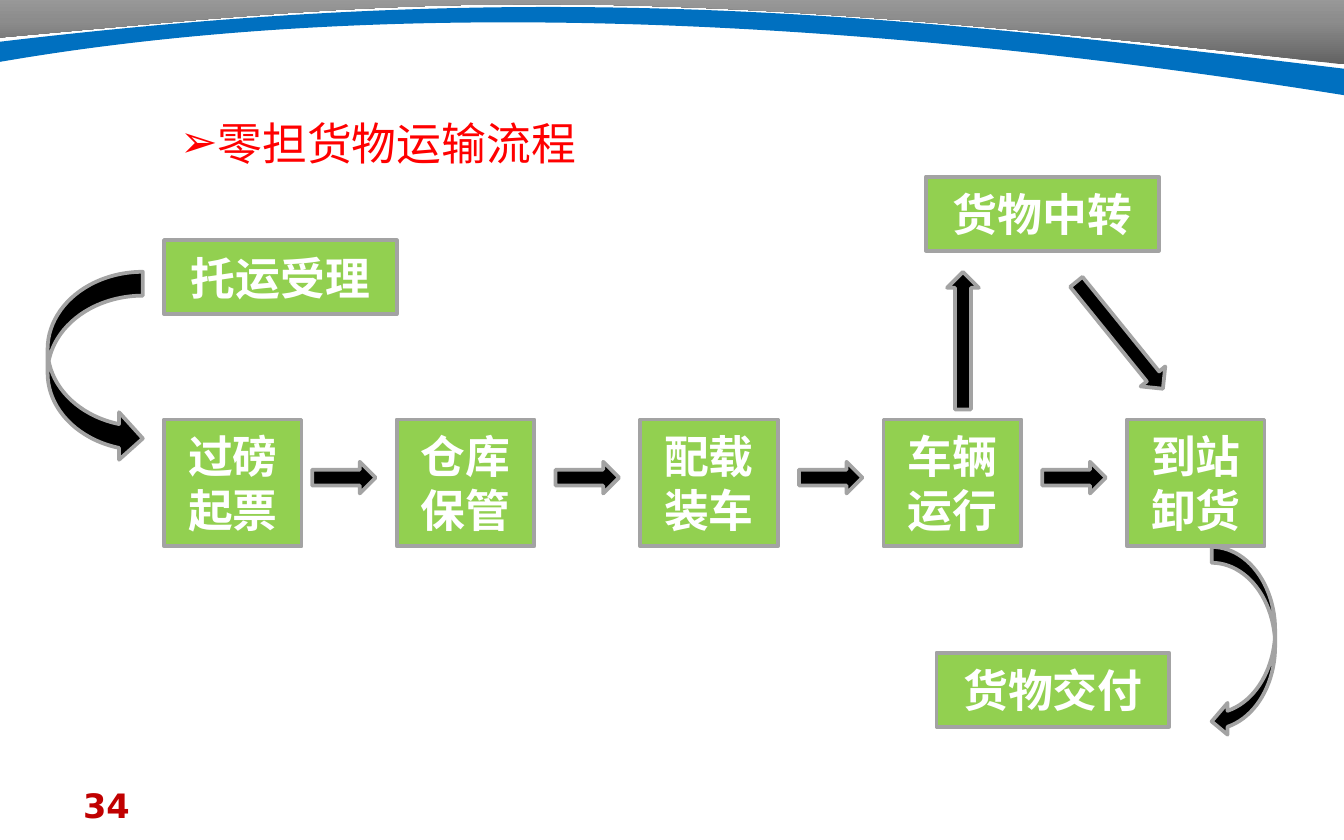
from copy import deepcopy

from lxml import etree
from pptx import Presentation
from pptx.dml.color import RGBColor
from pptx.enum import shapes, text
from pptx.oxml import ns
from pptx.util import Cm, Pt

COLORS = {
    "step": "92D050", "outline": "A3A3A3", "arrow": "000000", "white": "FFFFFF",
    "title": "FF0000", "number": "C00000", "band": "0070C0",
    "dark": "626262", "middle": "8C8C8C", "light": "A6A6A6",
}
CJK_FONT = "Noto Sans CJK SC"
RGB = {name: RGBColor.from_string(value) for name, value in COLORS.items()}


def style_font(para, name, size, color, bold):
    """Format a whole paragraph, East Asian characters included."""
    font = para.font
    font.name, font.size, font.bold = name, Pt(size), bold
    font.color.rgb = RGB[color]
    defaults = para._p.pPr.find(ns.qn("a:defRPr"))
    etree.SubElement(defaults, ns.qn("a:ea")).set("typeface", name)


def add_block(kind, left, top, width, height, color):
    block = page.shapes.add_shape(kind, Cm(left), Cm(top), Cm(width), Cm(height))
    block.shadow.inherit = False
    block.fill.solid()
    block.fill.fore_color.rgb = RGB[color]
    block.line.color.rgb = RGB["outline"]
    block.line.width = Pt(2)
    return block


deck = Presentation()
deck.slide_width, deck.slide_height = Cm(25.4), Cm(15.88)
page = deck.slides.add_slide(deck.slide_layouts[5])

# Header swooshes: outline points, and the index where each cubic curve begins
swooshes = {
    "gray": ([(25.4, 1.22), (11.25, -0.43), (7.82, 0), (0, 0.71),
              (0, 0.48), (0, -0.05), (25.4, -0.05)], (0,)),
    "blue": ([(0, 0.79), (10.24, -0.43), (16.56, 0.23), (25.4, 1.3),
              (25.4, 1.8), (15.37, 0.2), (6.78, 0), (0, 1.17)], (0, 4)),
}
headers = {}
for name, (points, curve_starts) in swooshes.items():
    points = [(Cm(x), Cm(y)) for x, y in points]
    builder = page.shapes.build_freeform(*points[0])
    builder.add_line_segments(points[1:], close=True)
    header = headers[name] = builder.convert_to_shape()
    header.shadow.inherit = False
    header.line.fill.background()
    segments = list(header._element.iter(ns.qn("a:lnTo")))
    for start in curve_starts:
        controls = segments[start:start + 3]
        curve = etree.Element(ns.qn("a:cubicBezTo"))
        controls[0].addprevious(curve)
        for control in controls:
            curve.append(control[0])
            control.getparent().remove(control)

headers["blue"].fill.solid()
headers["blue"].fill.fore_color.rgb = RGB["band"]

gray_fill = headers["gray"].fill
gray_fill.gradient()
gray_fill.gradient_angle = 90
first_stop = gray_fill._fill._gradFill.gsLst[0]
first_stop.addnext(deepcopy(first_stop))
for stop, position, color in zip(gray_fill.gradient_stops, (0, 0.5, 1),
                                 ("dark", "middle", "light")):
    stop.position = position
    stop.color.rgb = RGB[color]
effects = headers["gray"]._element.spPr.find(ns.qn("a:effectLst"))
shadow = etree.SubElement(effects, ns.qn("a:outerShdw"),
                          dist=str(Pt(2)), dir="5400000", rotWithShape="0")
etree.SubElement(shadow, ns.qn("a:srgbClr"), val=COLORS["white"])

# Title
title = page.shapes.title
title.left, title.top, title.width, title.height = Cm(2.31), Cm(1.55), Cm(20.19), Cm(1.8)
frame = title.text_frame
frame.text = "零担货物运输流程"
frame.word_wrap = True
frame.auto_size = text.MSO_AUTO_SIZE.SHAPE_TO_FIT_TEXT
frame.vertical_anchor = text.MSO_ANCHOR.TOP
para = frame.paragraphs[0]
para.alignment = text.PP_ALIGN.JUSTIFY
para.line_spacing = 1.5
props = para._p.get_or_add_pPr()
props.set("marL", "0")
props.set("indent", str(Cm(0.84)))
etree.SubElement(props, ns.qn("a:buFont")).set("typeface", "DejaVu Sans")
etree.SubElement(props, ns.qn("a:buChar")).set("char", "➢")
style_font(para, CJK_FONT, 24, "title", False)

# Page number
number = page.shapes.add_textbox(Cm(1.32), Cm(14.71), Cm(5.92), Cm(0.84)).text_frame
number.word_wrap = True
number.text = "34"
style_font(number.paragraphs[0], "DejaVu Sans", 18, "number", True)

# Process steps: one row of square boxes, and wide boxes around it
columns = [3.1] + [7.5 + 4.6 * i for i in range(4)]
row_labels = ["过磅起票", "仓库保管", "配载装车", "车辆运行", "到站卸货"]
steps = [(label, left, 7.93, 2.6, 2.4) for label, left in zip(row_labels, columns)]
steps += [(label, left, top, 4.4, 1.4) for label, left, top in (
    ("托运受理", 3.1, 4.54), ("货物交付", 17.7, 12.34), ("货物中转", 17.5, 3.34))]
for label, *place in steps:
    box = add_block(shapes.MSO_SHAPE.RECTANGLE, *place, "step")
    frame = box.text_frame
    frame.word_wrap = True
    frame.vertical_anchor = text.MSO_ANCHOR.MIDDLE
    frame.text = label
    frame.paragraphs[0].alignment = text.PP_ALIGN.CENTER
    style_font(frame.paragraphs[0], CJK_FONT, 24, "white", True)

# Arrows
for left in columns[1:]:
    add_block(shapes.MSO_SHAPE.RIGHT_ARROW, left - 1.6, 8.73, 1.2, 0.6, "arrow")
for left, top, angle in ((16.9, 6.14, 270), (19.86, 6.04, 51)):
    arrow = add_block(shapes.MSO_SHAPE.RIGHT_ARROW, left, top, 2.6, 0.6, "arrow")
    arrow.rotation = angle
add_block(shapes.MSO_SHAPE.CURVED_RIGHT_ARROW, 0.9, 5.14, 1.8, 3.6, "arrow")
add_block(shapes.MSO_SHAPE.CURVED_LEFT_ARROW, 22.9, 10.34, 1.2, 3.6, "arrow")

deck.save("out.pptx")
